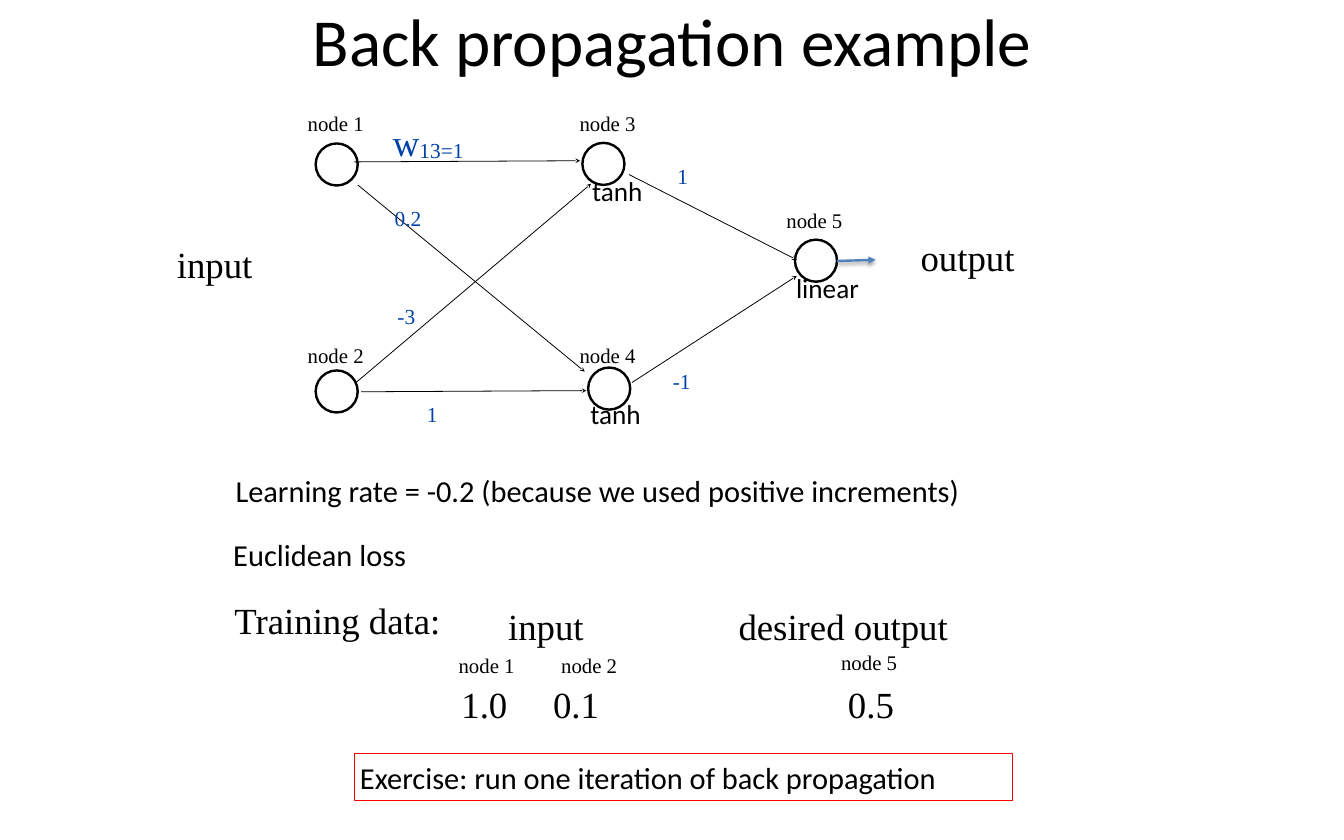
"""Build the back propagation example slide with its small neural network."""
from dataclasses import dataclass

from lxml.etree import SubElement
from pptx import Presentation
from pptx.dml.color import RGBColor
from pptx.enum.shapes import MSO_CONNECTOR, MSO_SHAPE
from pptx.enum.text import MSO_ANCHOR, PP_ALIGN
from pptx.oxml.ns import qn
from pptx.util import Inches, Pt


@dataclass(frozen=True)
class Theme:
    sans: str = "Calibri"
    serif: str = "Times New Roman"
    black: RGBColor = RGBColor(0, 0, 0)
    weight: RGBColor = RGBColor(0x00, 0x42, 0xAA)
    output: RGBColor = RGBColor(0x4F, 0x81, 0xBD)
    frame: RGBColor = RGBColor(0xFF, 0, 0)
    title_size: int = 84
    large_size: int = 46
    body_size: int = 38
    activation_size: int = 34
    node_size: int = 26


theme = Theme()
presentation = Presentation()
presentation.slide_width = Inches(23.33)
presentation.slide_height = Inches(14.58)
slide = presentation.slides.add_slide(presentation.slide_layouts[6])


def add_text(text, left, top, width, height, font, size, color=theme.black):
    """Add a one-line text box; serif labels do not wrap."""
    serif = font == theme.serif
    box = slide.shapes.add_textbox(Inches(left), Inches(top), Inches(width), Inches(height))
    frame = box.text_frame
    frame.word_wrap = not serif
    inset = Inches(0.11 if serif else 0.1)
    frame.margin_top = frame.margin_bottom = frame.margin_right = inset
    frame.margin_left = Inches(0.15) if serif else inset
    paragraph = frame.paragraphs[0]
    paragraph.add_run().text = text
    paragraph.font.name = font
    paragraph.font.size = Pt(size)
    paragraph.font.color.rgb = color
    return box


def add_arrow(start, end, color, width, arrowhead):
    """Add a straight arrow that points at its end."""
    connector = slide.shapes.add_connector(
        MSO_CONNECTOR.STRAIGHT, *(Inches(value) for value in (*start, *end)))
    connector.line.color.rgb = color
    connector.line.width = Pt(width)
    properties = connector._element.spPr
    SubElement(properties.find(qn("a:ln")), qn("a:tailEnd"), type=arrowhead)
    return SubElement(properties, qn("a:effectLst"))


title = add_text("Back propagation example", 2.92, -0.91, 17.5, 3.21, theme.sans, theme.title_size)
title.text_frame.vertical_anchor = MSO_ANCHOR.MIDDLE
title.text_frame.paragraphs[0].alignment = PP_ALIGN.CENTER

node_diameter = Inches(0.73)
for left, top in [(5.48, 2.49), (5.48, 6.43), (10.11, 2.48), (10.21, 6.38), (13.8, 4.16)]:
    node = slide.shapes.add_shape(
        MSO_SHAPE.OVAL, Inches(left), Inches(top), node_diameter, node_diameter)
    node.shadow.inherit = False
    node.fill.background()
    node.line.color.rgb = theme.black
    node.line.width = Pt(3)

node_labels = [
    ("node 1", 5.19, 1.81), ("node 2", 5.19, 5.84),
    ("node 3", 9.91, 1.81), ("node 4", 9.91, 5.84), ("node 5", 13.5, 3.49),
    ("node 1", 7.81, 11.22), ("node 2", 9.59, 11.22), ("node 5", 14.45, 11.17),
]
for text, left, top in node_labels:
    add_text(text, left, top, 1.25, 0.66, theme.serif, theme.node_size)

edges = [
    ((6.15, 2.81), (10.07, 2.79)), ((6.27, 6.8), (10.18, 6.78)),
    ((10.92, 3.03), (13.83, 4.51)), ((10.97, 6.64), (13.83, 4.79)),
    ((6.21, 3.21), (10.15, 6.45)), ((6.18, 6.64), (10.26, 3.19)),
]
for start, end in edges:
    add_arrow(start, end, theme.black, 1, "stealth")

weights = [
    ("w", "13=1", 6.67, 1.97, 1.61), ("", "0.2", 6.7, 3.14, 0.81),
    ("", "-3", 6.75, 4.84, 0.63), ("", "1", 7.26, 6.54, 0.49),
    ("", "1", 11.61, 2.41, 0.49), ("", "-1", 11.53, 5.97, 0.63),
]
for symbol, subscript, left, top, width in weights:
    label = add_text(symbol or subscript, left, top, width, 0.99,
                     theme.serif, theme.large_size, theme.weight)
    paragraph = label.text_frame.paragraphs[0]
    if symbol:
        paragraph.add_run().text = subscript
    paragraph.runs[-1]._r.get_or_add_rPr().set("baseline", "-6000")

large_labels = [
    ("input", 2.92, 4.08, 1.59), ("output", 15.83, 3.97, 1.91),
    ("Training data:", 3.92, 10.27, 3.85), ("input", 8.67, 10.36, 1.59),
    ("desired output", 12.67, 10.36, 3.91),
    ("1.0", 7.86, 11.73, 1.06), ("0.1", 9.45, 11.73, 1.06), ("0.5", 14.57, 11.73, 1.06),
]
for text, left, top, width in large_labels:
    add_text(text, left, top, width, 0.99, theme.serif, theme.large_size)

effects = add_arrow((14.53, 4.53), (15.2, 4.51), theme.output, 3, "triangle")
shadow = SubElement(effects, qn("a:outerShdw"), blurRad=str(Pt(5)), dist=str(Pt(3)),
                    dir="5400000", rotWithShape="0")
shadow_color = SubElement(shadow, qn("a:srgbClr"), val=str(theme.black))
SubElement(shadow_color, qn("a:alpha"), val="38000")

for text, left, top, width in [
    ("tanh", 10.18, 2.93, 1.49), ("tanh", 10.15, 6.8, 1.49), ("linear", 13.72, 4.61, 1.8),
]:
    add_text(text, left, top, width, 0.75, theme.sans, theme.activation_size)

add_text("Learning rate = -0.2 (because we used positive increments)",
         3.99, 8.1, 15.44, 0.81, theme.sans, theme.body_size)
add_text("Euclidean loss", 3.95, 9.21, 3.52, 0.81, theme.sans, theme.body_size)
exercise = add_text("Exercise: run one iteration of back propagation",
                    6.15, 13.08, 11.43, 0.82, theme.sans, theme.body_size)
exercise.line.color.rgb = theme.frame
exercise.line.width = Pt(1)

presentation.save("out.pptx")
